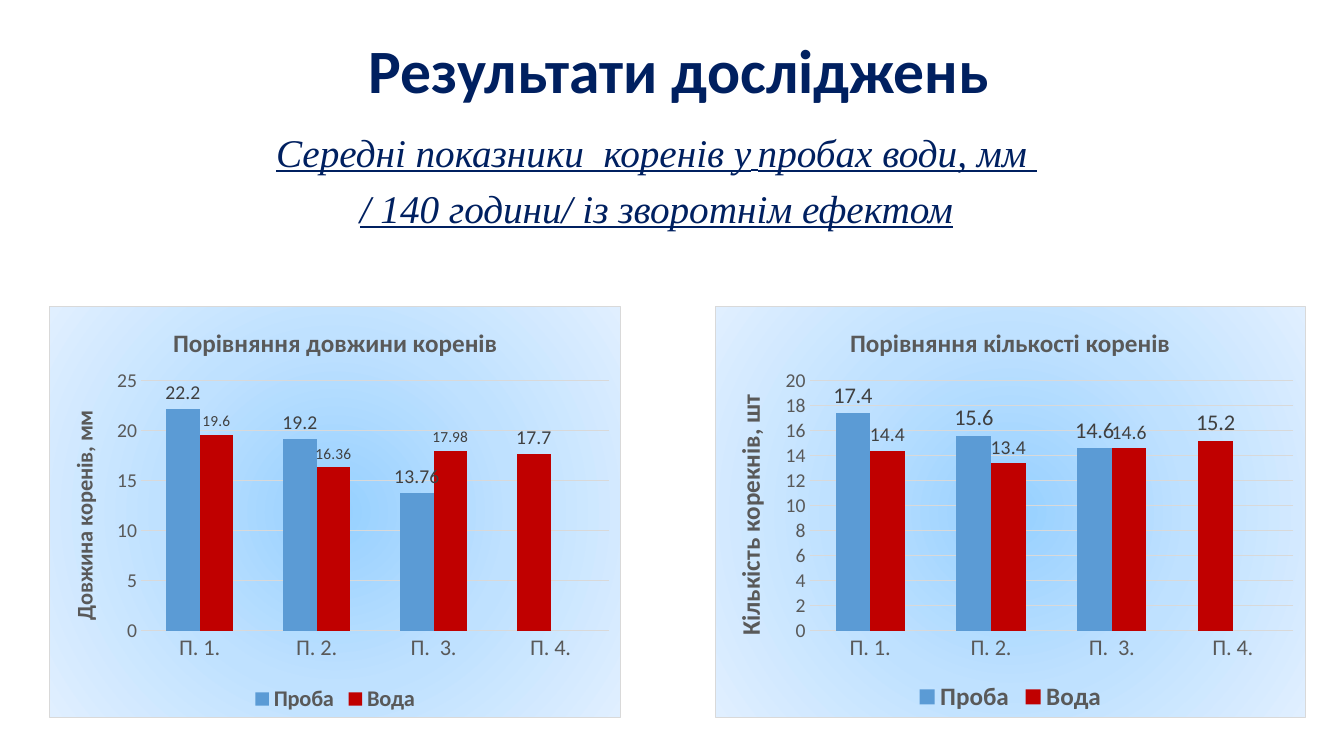
from lxml import etree
from pptx import Presentation
from pptx.chart.data import CategoryChartData
from pptx.dml.color import RGBColor
from pptx.enum.chart import XL_CHART_TYPE, XL_LABEL_POSITION, XL_LEGEND_POSITION, XL_TICK_MARK
from pptx.enum.text import MSO_ANCHOR, PP_ALIGN
from pptx.oxml import parse_xml
from pptx.oxml.ns import qn
from pptx.util import Inches, Pt

COLUMNS = XL_CHART_TYPE.COLUMN_CLUSTERED
LEGEND_BOTTOM = XL_LEGEND_POSITION.BOTTOM
OUTSIDE_END = XL_LABEL_POSITION.OUTSIDE_END
NO_TICK = XL_TICK_MARK.NONE
CENTER = PP_ALIGN.CENTER
TOP, MIDDLE = MSO_ANCHOR.TOP, MSO_ANCHOR.MIDDLE

# Content
NAVY, GRAY, DARK, GRID = "002060", "595959", "404040", "D9D9D9"
BLUE, RED = "5B9BD5", "C00000"
TITLE = [[("Результати досліджень", "Calibri", 44)]]
SUBTITLE = [
    [("Середні показники  коренів у", "Times New Roman", 28),
     (" ", "Calibri", 20),
     ("пробах води, мм ", "Times New Roman", 28)],
    [("/ 140 години/ із зворотнім ефектом", "Times New Roman", 28)],
]
CATEGORIES = ["П. 1.", "П. 2.", "П.  3.", "П. 4."]
BACKGROUND = [(0, "96D0FF"), (50, "BFE1FF"), (100, "E0EFFF")]
PLOT_AREA = {"x": 0.16, "y": 0.18, "w": 0.82, "h": 0.61}
CHART_TOP, CHART_HEIGHT = 3.04, 4.08
CHARTS = [
    {"left": 0.49, "width": 5.67, "title": "Порівняння довжини коренів",
     "axis": "Довжина коренів, мм", "size": 16, "top": 25, "step": 5,
     "series": [("Проба", [22.2, 19.2, 13.76, 17.7], BLUE, 14),
                ("Вода", [19.6, 16.36, 17.98, None], RED, 11)]},
    {"left": 7.09, "width": 5.86, "title": "Порівняння кількості коренів",
     "axis": "Кількість корекнів, шт", "size": 18, "top": 20, "step": 2,
     "series": [("Проба", [17.4, 15.6, 14.6, 15.2], BLUE, 16),
                ("Вода", [14.4, 13.4, 14.6, None], RED, 14)]},
]


def color(value):
    return RGBColor.from_string(value)


def style(font, size, value, name="Calibri", bold=False, italic=False, underline=False):
    font.size, font.name = Pt(size), name
    font.bold, font.italic, font.underline = bold, italic, underline
    font.color.rgb = color(value)


def add_text(page, paragraphs, left, top, width, height, anchor=TOP,
             spacing=1.0, after=0, **form):
    box = page.shapes.add_textbox(Inches(left), Inches(top), Inches(width), Inches(height))
    frame = box.text_frame
    frame.word_wrap = True
    frame.vertical_anchor = anchor
    for index, spans in enumerate(paragraphs):
        para = frame.paragraphs[0] if index == 0 else frame.add_paragraph()
        para.alignment = CENTER
        para.line_spacing = spacing
        para.space_after = Pt(after)
        for text, name, size in spans:
            span = para.add_run()
            span.text = text
            style(span.font, size, NAVY, name, **form)


def set_heading(heading, text, size):
    frame = heading.text_frame
    frame.text = text
    style(frame.paragraphs[0].runs[0].font, size, GRAY, bold=True)


def fill_background(space):
    stops = "".join(f'<a:gs pos="{place * 1000}"><a:srgbClr val="{value}"/></a:gs>'
                    for place, value in BACKGROUND)
    space.find(qn("c:chart")).addnext(parse_xml(
        '<c:spPr xmlns:c="http://schemas.openxmlformats.org/drawingml/2006/chart" '
        'xmlns:a="http://schemas.openxmlformats.org/drawingml/2006/main">'
        f'<a:gradFill><a:gsLst>{stops}</a:gsLst><a:path path="circle">'
        '<a:fillToRect l="50000" t="50000" r="50000" b="50000"/></a:path></a:gradFill>'
        f'<a:ln w="9525"><a:solidFill><a:srgbClr val="{GRID}"/></a:solidFill></a:ln>'
        '</c:spPr>'))


def place_plot(space):
    area = space.find(qn("c:chart")).find(qn("c:plotArea"))
    for old in area.findall(qn("c:layout")):
        area.remove(old)
    layout = etree.Element(qn("c:layout"))
    manual = etree.SubElement(layout, qn("c:manualLayout"))
    settings = {"layoutTarget": "inner", "xMode": "edge", "yMode": "edge", **PLOT_AREA}
    for name, value in settings.items():
        etree.SubElement(manual, qn(f"c:{name}")).set("val", str(value))
    area.insert(0, layout)


def add_columns(page, item):
    data = CategoryChartData()
    data.categories = CATEGORIES
    for name, values, _, _ in item["series"]:
        data.add_series(name, values)
    chart = page.shapes.add_chart(
        COLUMNS, Inches(item["left"]), Inches(CHART_TOP),
        Inches(item["width"]), Inches(CHART_HEIGHT), data).chart
    style(chart.font, 10, "000000")

    # Titles and legend
    chart.has_title = True
    set_heading(chart.chart_title, item["title"], 18)
    chart.has_legend = True
    chart.legend.position = LEGEND_BOTTOM
    chart.legend.include_in_layout = False
    style(chart.legend.font, item["size"], GRAY, bold=True)

    # Axes
    for axis, size in ((chart.category_axis, 16), (chart.value_axis, 14)):
        axis.major_tick_mark = axis.minor_tick_mark = NO_TICK
        axis.format.line.fill.background()
        style(axis.tick_labels.font, size, GRAY)
    values = chart.value_axis
    values.minimum_scale, values.maximum_scale = 0, item["top"]
    values.major_unit = item["step"]
    values.has_major_gridlines = True
    values.major_gridlines.format.line.color.rgb = color(GRID)
    values.major_gridlines.format.line.width = Pt(0.75)
    set_heading(values.axis_title, item["axis"], item["size"])

    # Columns; the last control point takes the water colour
    plot = chart.plots[0]
    plot.gap_width, plot.overlap = 150, 0
    plot.vary_by_categories = False
    for series, (_, _, fill, size) in zip(plot.series, item["series"]):
        series.format.fill.solid()
        series.format.fill.fore_color.rgb = color(fill)
        labels = series.data_labels
        labels.show_value = True
        labels.position = OUTSIDE_END
        style(labels.font, size, DARK)
    last = plot.series[0].points[len(CATEGORIES) - 1].format.fill
    last.solid()
    last.fore_color.rgb = color(RED)

    # Background, plot position and upright axis title
    space = chart._chartSpace
    fill_background(space)
    place_plot(space)
    for body in space.xpath(".//c:valAx/c:title//a:bodyPr"):
        body.set("rot", "-5400000")
        body.set("vert", "horz")


def main():
    deck = Presentation()
    deck.slide_width, deck.slide_height = Inches(13.33), Inches(7.5)
    page = deck.slides.add_slide(deck.slide_layouts[6])
    add_text(page, TITLE, 3.24, 0, 6.99, 1.45, anchor=MIDDLE, spacing=0.9, bold=True)
    add_text(page, SUBTITLE, 0.07, 1.27, 12.88, 1.08, spacing=Pt(30), after=10,
             italic=True, underline=True)
    for item in CHARTS:
        add_columns(page, item)
    deck.save("out.pptx")


if __name__ == "__main__":
    main()
